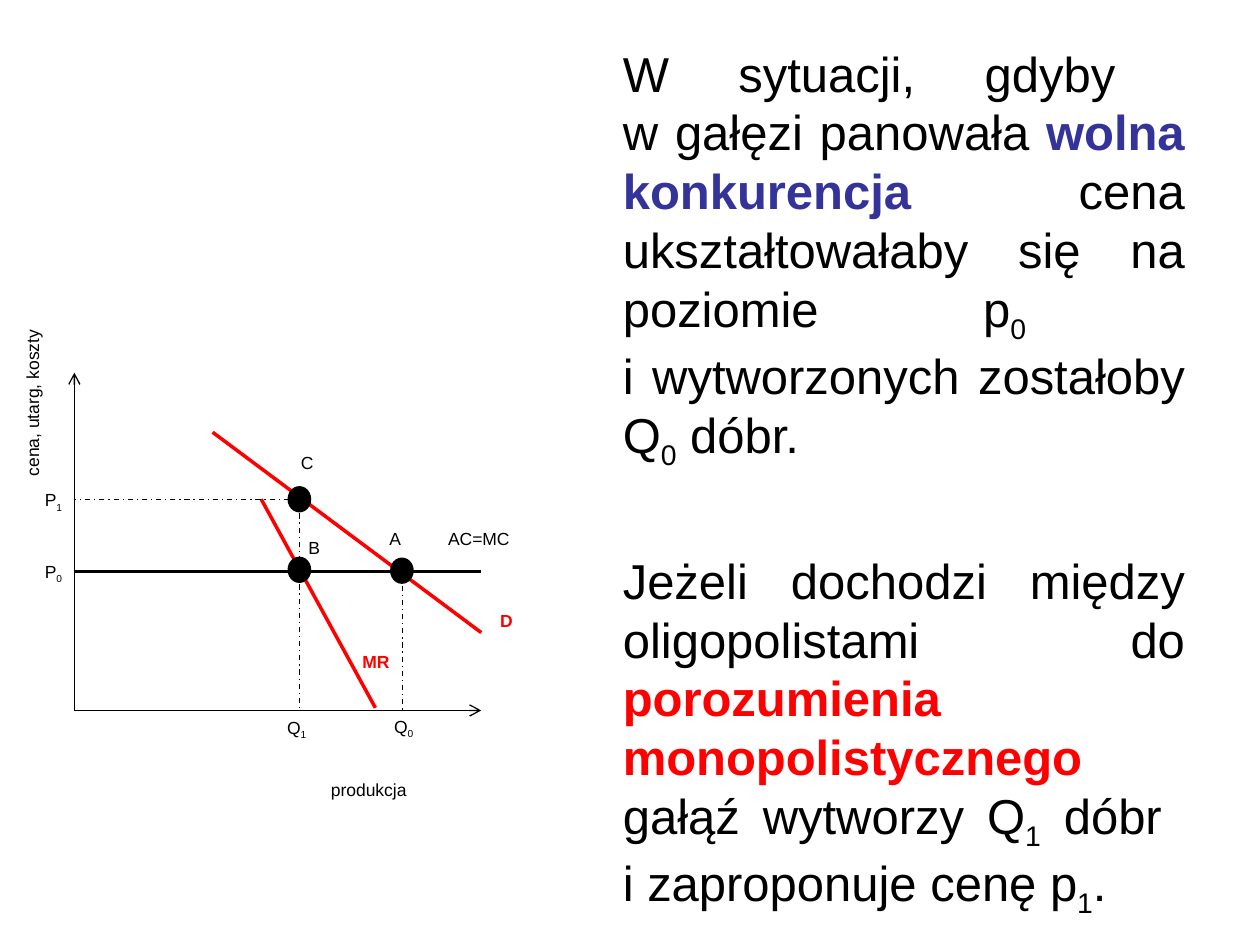
from copy import deepcopy

from lxml.etree import SubElement
from pptx import Presentation
from pptx.dml.color import RGBColor as RGB
from pptx.enum.dml import MSO_LINE as Dash
from pptx.enum.shapes import MSO_CONNECTOR as Conn, MSO_SHAPE as Shape
from pptx.enum.text import MSO_ANCHOR as Anchor, MSO_AUTO_SIZE as Fit, PP_ALIGN as Align
from pptx.oxml.ns import qn
from pptx.util import Pt

HUES = {"black": "000000", "red": "FF0000", "blue": "333399"}


def hue(name):
    """Return the named colour."""
    return RGB.from_string(HUES[name])


def write(par, text, size=10, color="black", bold=False, sub=False):
    """Add formatted text to a paragraph, with a line break at each newline."""
    for i, part in enumerate(text.split("\n")):
        if i:
            par.add_line_break()
            par._p[-1].append(deepcopy(run._r.rPr))
            if not part:
                break
        run = par.add_run()
        run.text = part
        font = run.font
        font.name, font.size, font.bold = "Arial", Pt(size), bold
        font.color.rgb = hue(color)
        if sub:
            run._r.rPr.set("baseline", "-25000")


def label(slide, x, y, wide, text, sub="", pad=7.2, turn=0, **form):
    """Place a chart label with an optional subscript."""
    box = slide.shapes.add_textbox(Pt(x), Pt(y), Pt(wide), Pt(19.4))
    box.rotation = turn
    frame = box.text_frame
    frame.word_wrap = True
    frame.margin_left, frame.margin_right = Pt(pad), 0
    par = frame.paragraphs[0]
    write(par, text, **form)
    if sub:
        write(par, sub, sub=True, **form)


def line(slide, start, end, color="black", width=0.75, dash=None, arrow=False):
    """Draw a straight line between two points."""
    ends = [Pt(v) for v in (*start, *end)]
    conn = slide.shapes.add_connector(Conn.STRAIGHT, *ends)
    conn.line.color.rgb = hue(color)
    conn.line.width = Pt(width)
    if dash:
        conn.line.dash_style = dash
    if arrow:
        SubElement(conn.line._get_or_add_ln(), qn("a:tailEnd"), type="arrow")
    SubElement(conn._element.spPr, qn("a:effectLst"))


def dot(slide, x, y, wide=11.5, high=13):
    """Draw a black marker centred on a point."""
    mark = slide.shapes.add_shape(
        Shape.OVAL, Pt(x - wide / 2), Pt(y - high / 2), Pt(wide), Pt(high))
    mark.shadow.inherit = False
    mark.fill.solid()
    mark.fill.fore_color.rgb = hue("black")
    mark.line.color.rgb = hue("black")
    mark.line.width = Pt(2)


def graph(slide, left, top, wide, high):
    """Draw the market diagram in the box spanned by its axes."""
    def at(x, y):
        return left + x, top + y

    p0, p1, q0, q1 = 113.6, 72.3, 187.7, 128.6
    for tip in ((0, 0), (wide, high)):
        line(slide, at(0, high), at(*tip), arrow=True)
    line(slide, at(0, p0), at(wide, p0), width=2)
    line(slide, at(79, 34), at(wide, 148.5), color="red", width=2)
    line(slide, at(106.8, p1), at(172, 191.5), color="red", width=2)
    for start, end in (((q0, p0), (q0, high)), ((q1, p1), (q1, high)),
                       ((q1 - 6, p1), (0, p1))):
        line(slide, at(*start), at(*end), dash=Dash.DASH_DOT)
    for x, y in ((q0 - 0.5, p0 - 0.5), (q1, p0 - 1), (q1, p1)):
        dot(slide, *at(x, y))

    red = {"color": "red", "bold": True}
    for x, y, span, text, form in (
            (139.5, 228.6, 96.5, "produkcja", {}),
            (-83.5, -3, 119, "cena, utarg, koszty", {"turn": 270}),
            (206.5, 85, 52, "AC=MC", {}),
            (236.2, 132, 24.5, "D", red),
            (157.5, 155.5, 38, "MR", red),
            (175.6, 192.5, 34.5, "Q", {"sub": "0"}),
            (114.5, 193, 34.5, "Q", {"sub": "1"}),
            (-24, 63, 34.5, "P", {"sub": "1"}),
            (-24, 104, 34.5, "P", {"sub": "0"}),
            (175.7, 85, 11.5, "A", {"pad": 4.3}),
            (128.4, 90.6, 13.7, "B", {"pad": 5.3}),
            (122.4, 42, 20, "C", {})):
        label(slide, *at(x, y), span, text, **form)


def prose(body, left, top, wide, high):
    """Fill the body placeholder with the two justified paragraphs."""
    body.left, body.top, body.width, body.height = map(Pt, (left, top, wide, high))
    frame = body.text_frame
    frame.word_wrap, frame.auto_size = True, Fit.NONE
    frame.vertical_anchor = Anchor.TOP
    frame.margin_top = Pt(3.6)
    low = {"sub": True}
    texts = (
        (("W sytuacji, gdyby \nw gałęzi panowała ", {}),
         ("wolna konkurencja ", {"color": "blue", "bold": True}),
         ("cena ukształtowałaby się na poziomie p", {}), ("0 \n", low),
         ("i wytworzonych zostałoby Q", {}), ("0", low), (" dóbr.", {})),
        (("Jeżeli dochodzi między oligopolistami do ", {}),
         ("porozumienia monopolistycznego ", {"color": "red", "bold": True}),
         ("gałąź wytworzy Q", {}), ("1", low),
         (" dóbr \ni zaproponuje cenę p", {}), ("1", low), (".", {})))
    for i, runs in enumerate(texts):
        par = frame.add_paragraph() if i else frame.paragraphs[0]
        props = par._p.get_or_add_pPr()
        props.set("marL", "0")
        props.set("indent", "0")
        SubElement(props, qn("a:buNone"))
        par.alignment = Align.JUSTIFY
        par.line_spacing = 1.0
        par.space_before = Pt(45.2 * i)
        for text, form in runs:
            write(par, text, size=28, **form)


def main():
    """Build and save the slide."""
    deck = Presentation()
    deck.slide_width, deck.slide_height = Pt(720), Pt(540)
    slide = deck.slides.add_slide(deck.slide_layouts[1])
    title = slide.shapes.title._element
    title.getparent().remove(title)
    prose(slide.placeholders[1], 348.7, 21, 335.5, 499)
    graph(slide, 42.5, 213, 232.5, 193)
    deck.save("out.pptx")


if __name__ == "__main__":
    main()
